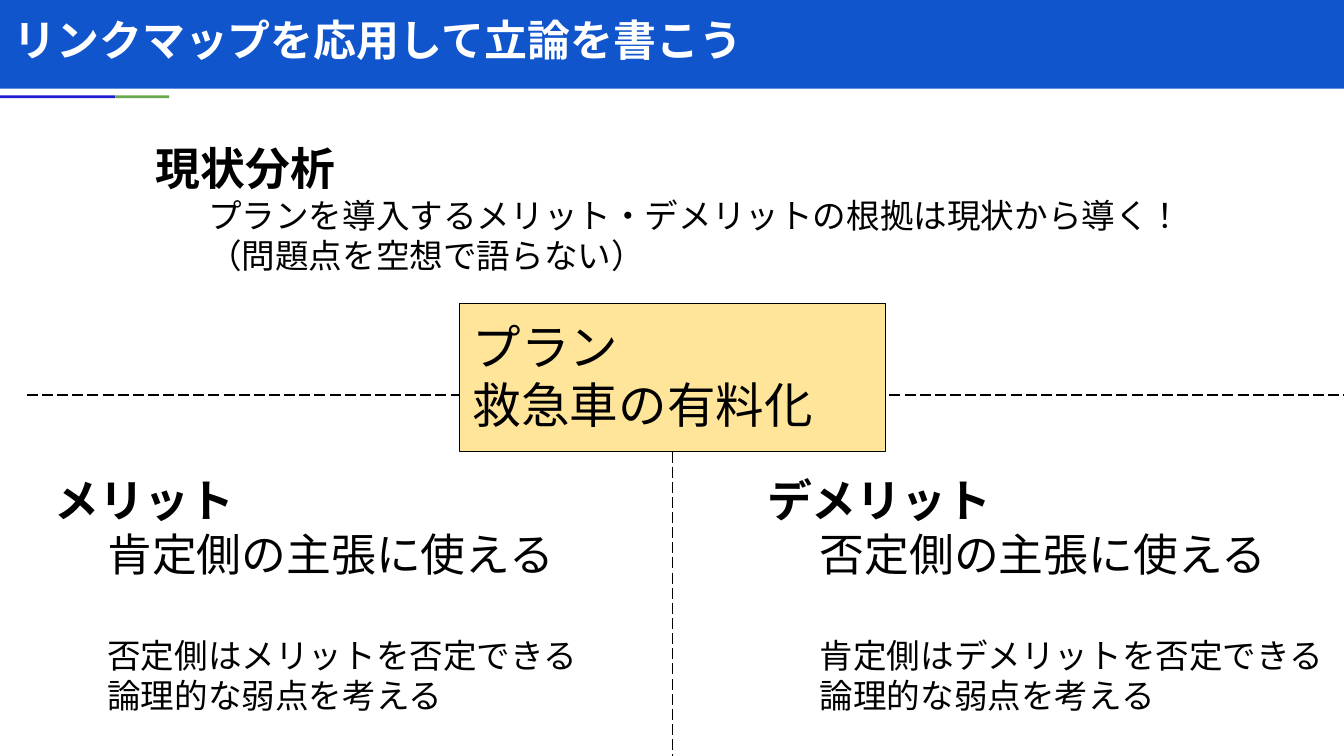
from lxml.etree import SubElement
from pptx import Presentation
from pptx.dml.color import RGBColor
from pptx.enum.dml import MSO_LINE
from pptx.enum.lang import MSO_LANGUAGE_ID as LANG
from pptx.enum.shapes import MSO_CONNECTOR, MSO_SHAPE
from pptx.enum.text import MSO_ANCHOR as ANCHOR, PP_ALIGN
from pptx.oxml.ns import qn
from pptx.util import Inches, Pt

W = 10
H = W * 9 / 16
BLACK = "000000"
INDENT = 0.39
COL_TOP, COL_W, COL_H = 3.42, 4.48, 2.17
LEFT_COL, RIGHT_COL = 0.31, 5.61
RULE_Y = 2.94


def rgb(hex_color):
    return RGBColor.from_string(hex_color)


def add_run(p, text, size, bold, color, font):
    r = p.add_run()
    r.text = text
    r.font.size = Pt(size)
    r.font.bold = bold
    r.font.color.rgb = rgb(color)
    r.font.name = font
    r.font.language_id = LANG.JAPANESE
    SubElement(r.font._element, qn("a:ea")).set("typeface", font)


def fill_text(sp, paragraphs, anchor=ANCHOR.TOP, color=BLACK, font="Lato"):
    """Each paragraph is (lines, size, bold, indent, space before)."""
    tf = sp.text_frame
    tf.word_wrap = True
    tf.vertical_anchor = anchor
    tf.margin_left = tf.margin_right = Inches(0.1)
    tf.margin_top = tf.margin_bottom = Inches(0.1)
    for i, (lines, size, bold, indent, before) in enumerate(paragraphs):
        p = tf.add_paragraph() if i else tf.paragraphs[0]
        p.alignment = PP_ALIGN.LEFT
        p.space_before = Pt(before)
        if indent:
            p._p.get_or_add_pPr().set("marL", str(Inches(indent)))
        for j, line in enumerate(lines):
            if j:
                p.add_line_break()
            add_run(p, line, size, bold, color, font)


def add_text(s, box, paragraphs, **style):
    fill_text(s.shapes.add_textbox(*map(Inches, box)), paragraphs, **style)


def add_rect(s, box, fill, line=None):
    sp = s.shapes.add_shape(MSO_SHAPE.RECTANGLE, *map(Inches, box))
    sp.shadow.inherit = False
    sp.fill.solid()
    sp.fill.fore_color.rgb = rgb(fill)
    if line:
        sp.line.color.rgb = rgb(line)
        sp.line.width = Pt(0.75)
    else:
        sp.line.fill.background()
    return sp


def add_dashed(s, x1, y1, x2, y2):
    cn = s.shapes.add_connector(MSO_CONNECTOR.STRAIGHT, *map(Inches, (x1, y1, x2, y2)))
    cn.line.color.rgb = rgb(BLACK)
    cn.line.width = Pt(0.75)
    cn.line.dash_style = MSO_LINE.LONG_DASH
    SubElement(cn._element.spPr, qn("a:effectLst"))
    return cn


def add_side(s, left, heading, use, rebuttal):
    """One side of the debate: heading, who uses it, how to rebut it."""
    add_text(s, (left, COL_TOP, COL_W, COL_H), [
        ([heading], 24, True, 0, 0),
        ([use], 24, False, INDENT, 0),
        (rebuttal, 18, False, INDENT, 29),
    ])


def main():
    prs = Presentation()
    prs.slide_width, prs.slide_height = Inches(W), Inches(H)
    s = prs.slides.add_slide(prs.slide_layouts[6])

    add_rect(s, (-0.01, -0.02, 10.05, 0.68), "1155CC")
    add_rect(s, (0.86, 0.71, 0.4, 0.02), "6AA84F")
    add_rect(s, (0, 0.71, 0.86, 0.02), "211DD1")

    add_dashed(s, 0.2, RULE_Y, 10.09, RULE_Y)
    plan = add_rect(s, (3.42, 2.26, 3.17, 1.1), "FFE599", BLACK)
    fill_text(plan, [([line], 26, False, 0, 0) for line in ("プラン", "救急車の有料化")])
    divider = add_dashed(s, W / 2, 3.36, W / 2, H)
    divider.begin_connect(plan, 2)
    divider.end_x = divider.begin_x

    add_text(s, (1.06, 0.95, 8.18, 1.45), [
        (["現状分析"], 24, True, 0, 0),
        (["プランを導入するメリット・デメリットの根拠は現状から導く！",
          "（問題点を空想で語らない）"], 18, False, INDENT, 0),
    ])
    add_side(s, LEFT_COL, "メリット", "肯定側の主張に使える",
             ["否定側はメリットを否定できる", "論理的な弱点を考える"])
    add_side(s, RIGHT_COL, "デメリット", "否定側の主張に使える",
             ["肯定側はデメリットを否定できる", "論理的な弱点を考える"])
    add_text(s, (0, 0, 8.41, 0.59),
             [(["リンクマップを応用して立論を書こう"], 23, True, 0, 0)],
             anchor=ANCHOR.MIDDLE, color="FFFFFF", font="Noto Sans CJK JP")

    prs.save("out.pptx")


if __name__ == "__main__":
    main()
